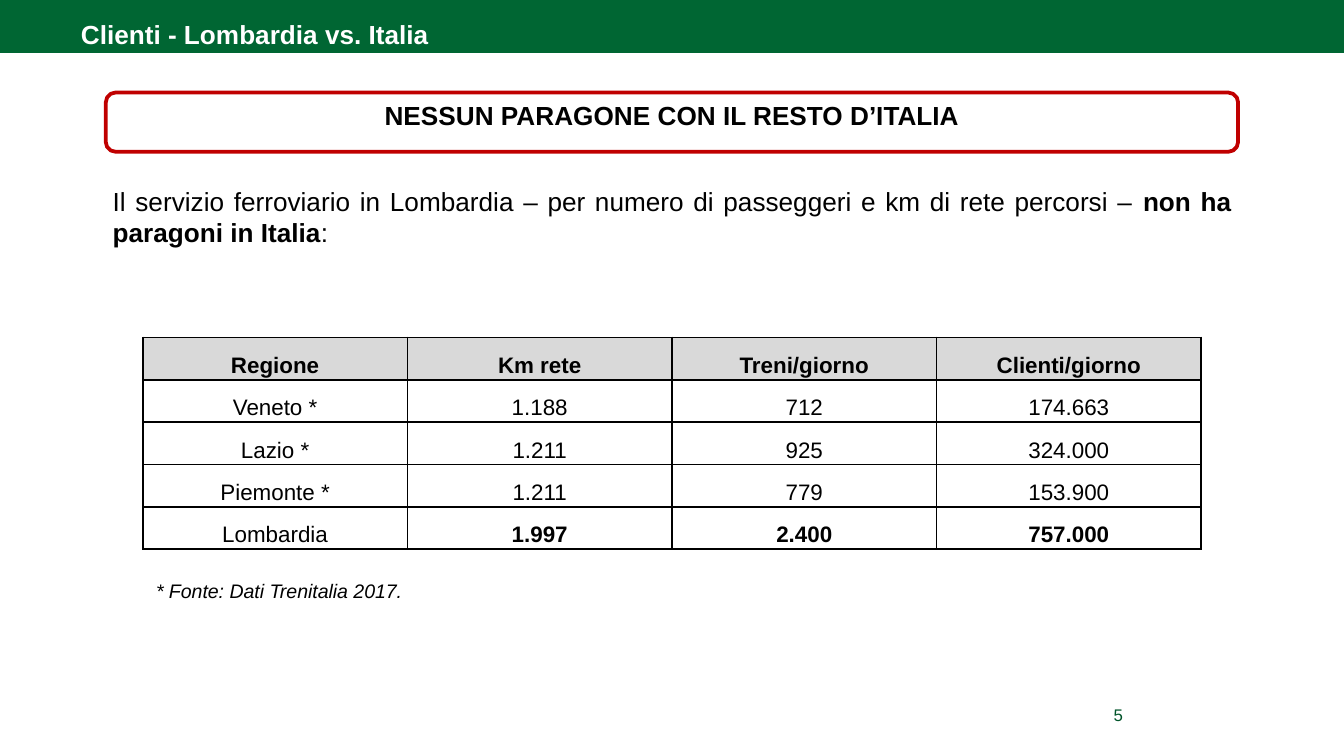
from dataclasses import dataclass

from lxml import etree
from pptx import Presentation
from pptx.dml.color import RGBColor
from pptx.enum.shapes import MSO_SHAPE
from pptx.enum.text import MSO_ANCHOR, MSO_AUTO_SIZE, PP_ALIGN
from pptx.oxml.ns import qn
from pptx.util import Cm, Pt

RECT, ROUND = MSO_SHAPE.RECTANGLE, MSO_SHAPE.ROUNDED_RECTANGLE
LEFT, MID, JUST = PP_ALIGN.LEFT, PP_ALIGN.CENTER, PP_ALIGN.JUSTIFY
MIDDLE, GROW = MSO_ANCHOR.MIDDLE, MSO_AUTO_SIZE.SHAPE_TO_FIT_TEXT


@dataclass(frozen=True)
class Theme:
    """Colours, type sizes and typeface of the slide."""
    green: str = "006633"
    page: str = "00542A"
    red: str = "C00000"
    grey: str = "D9D9D9"
    ink: str = "000000"
    white: str = "FFFFFF"
    face: str = "Arial"
    head: float = 14
    cell: float = 12
    note: float = 10.5
    small: float = 9


THEME = Theme()
ROWS = [
    ("Regione", "Km rete", "Treni/giorno", "Clienti/giorno"),
    ("Veneto *", "1.188", "712", "174.663"),
    ("Lazio *", "1.211", "925", "324.000"),
    ("Piemonte *", "1.211", "779", "153.900"),
    ("Lombardia", "1.997", "2.400", "757.000"),
]


def assign(item, values):
    """Set each attribute named in a dict of format values."""
    for name, value in values.items():
        setattr(item, name, value)


def write(para, text, size, color=THEME.ink, **style):
    """Add one formatted run to a paragraph."""
    run = para.add_run()
    run.text = text
    assign(run.font, {"name": THEME.face, "size": Pt(size), **style})
    run.font.color.rgb = RGBColor.from_string(color)


def add_text(slide, box, side=0.25, edge=0.13):
    """Add a wrapping text box and return its frame."""
    frame = slide.shapes.add_textbox(*map(Cm, box)).text_frame
    assign(frame, {
        "word_wrap": True, "auto_size": GROW,
        "margin_left": Cm(side), "margin_right": Cm(side),
        "margin_top": Cm(edge), "margin_bottom": Cm(edge),
    })
    return frame


def add_block(slide, kind, box):
    """Add a preset shape without shadow."""
    shape = slide.shapes.add_shape(kind, *map(Cm, box))
    shape.shadow.inherit = False
    return shape


def add_band(slide, box):
    """Draw the title band with its heading."""
    left, top, width, height = box
    band = add_block(slide, RECT, box)
    band.fill.solid()
    band.fill.fore_color.rgb = RGBColor.from_string(THEME.green)
    band.line.fill.background()
    frame = add_text(slide, (left + 1.3, top - 0.05, width - 2.6, height + 0.12), 0.23, 0.1)
    para = frame.paragraphs[0]
    assign(para, {"alignment": LEFT, "line_spacing": 1.5, "space_after": Pt(2.6)})
    write(para, "Clienti - Lombardia vs. Italia", THEME.head, THEME.white, bold=True)


def add_claim(slide, box):
    """Write the framed claim and the sentence below it."""
    left, top, width, _ = box
    frame = add_text(slide, box, 0.13, 0.13)
    para = frame.paragraphs[0]
    assign(para, {"alignment": MID, "space_after": Pt(3)})
    write(para, "NESSUN PARAGONE CON IL RESTO D’ITALIA", THEME.head, bold=True)
    para = frame.add_paragraph()
    assign(para, {"alignment": JUST, "space_before": Pt(26), "space_after": Pt(3)})
    for text, bold in (
        ("Il servizio ferroviario in Lombardia – per numero di passeggeri "
         "e km di rete percorsi – ", False),
        ("non ha paragoni in Italia", True),
        (":", False),
    ):
        write(para, text, THEME.head, bold=bold)
    rim = add_block(slide, ROUND, (left, top, width, 1.12))
    rim.fill.background()
    rim.line.color.rgb = RGBColor.from_string(THEME.red)
    rim.line.width = Pt(2)


def add_rim(cell):
    """Draw a thin line on each side of a cell."""
    props = cell._tc.get_or_add_tcPr()
    for spot, side in enumerate(("a:lnL", "a:lnR", "a:lnT", "a:lnB")):
        line = etree.Element(qn(side), w=str(Pt(1)))
        fill = etree.SubElement(line, qn("a:solidFill"))
        etree.SubElement(fill, qn("a:srgbClr"), val=THEME.ink)
        props.insert(spot, line)


def add_grid(slide, box):
    """Build the table of regions."""
    _, _, width, height = box
    table = slide.shapes.add_table(len(ROWS), len(ROWS[0]), *map(Cm, box)).table
    assign(table, {"first_row": False, "horz_banding": False})
    for col in table.columns:
        col.width = Cm(width / len(ROWS[0]))
    for row in table.rows:
        row.height = Cm(height / len(ROWS))
    last = len(ROWS) - 1
    for i, row in enumerate(ROWS):
        for j, text in enumerate(row):
            cell = table.cell(i, j)
            assign(cell, {
                "vertical_anchor": MIDDLE, "margin_left": Cm(0.03),
                "margin_right": Cm(0.03), "margin_top": Cm(0.03), "margin_bottom": 0,
            })
            add_rim(cell)
            if i == 0:
                cell.fill.solid()
                cell.fill.fore_color.rgb = RGBColor.from_string(THEME.grey)
            else:
                cell.fill.background()
            para = cell.text_frame.paragraphs[0]
            assign(para, {"alignment": MID, "line_spacing": 1.5})
            write(para, text, THEME.cell, bold=i == 0 or (i == last and j > 0))


def add_note(slide, box):
    """Write the source note under the table."""
    para = add_text(slide, box).paragraphs[0]
    write(para, "* Fonte: Dati Trenitalia 2017.", THEME.note, italic=True)


def add_page(slide, box):
    """Write the page number."""
    para = add_text(slide, box, 0.23, 0.1).paragraphs[0]
    para.alignment = MID
    write(para, "5", THEME.small, THEME.page)


def main():
    """Build and save the slide."""
    deck = Presentation()
    assign(deck, {"slide_width": Cm(25.4), "slide_height": Cm(14.29)})
    slide = deck.slides.add_slide(deck.slide_layouts[6])
    add_band(slide, (0, 0, 25.4, 1))
    add_page(slide, (20.4, 13.23, 1.47, 0.6))
    add_grid(slide, (2.7, 6.38, 20, 4))
    add_note(slide, (2.7, 10.82, 20, 0.74))
    add_claim(slide, (2, 1.75, 21.4, 4.11))
    deck.save("out.pptx")


if __name__ == "__main__":
    main()
